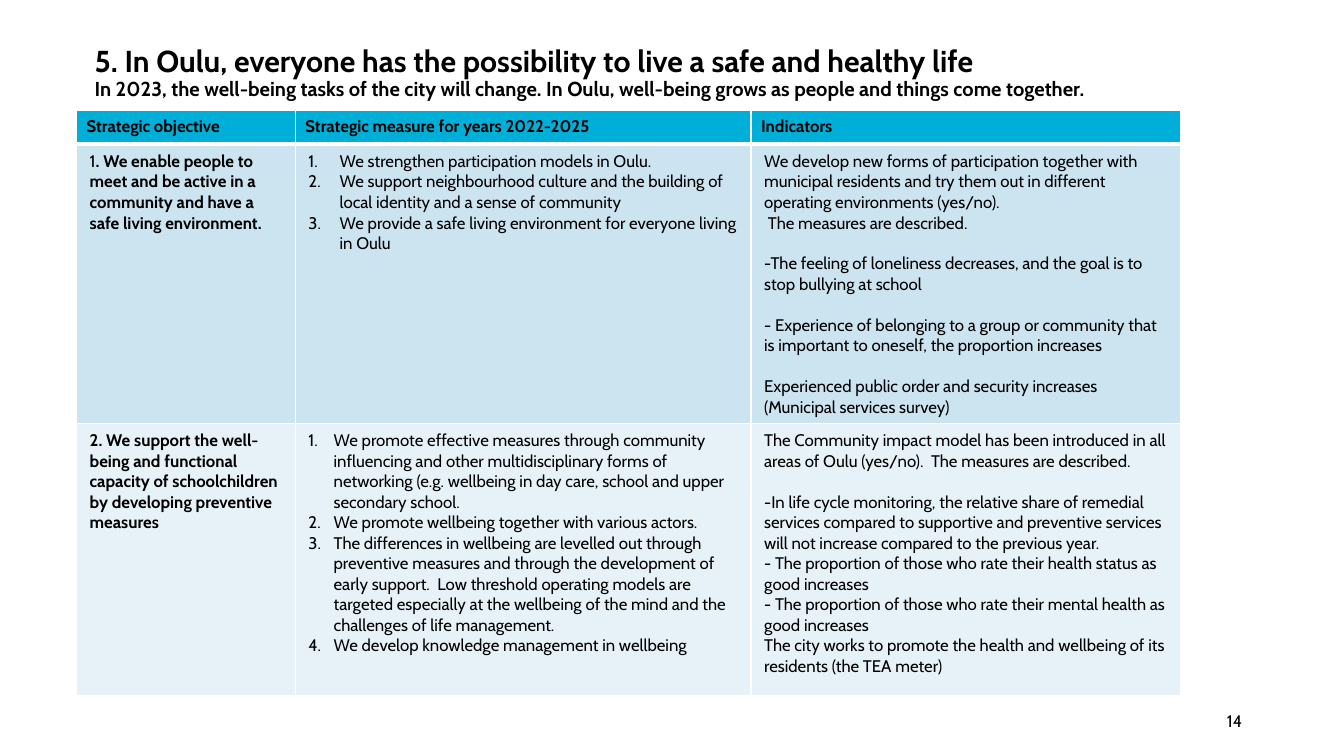
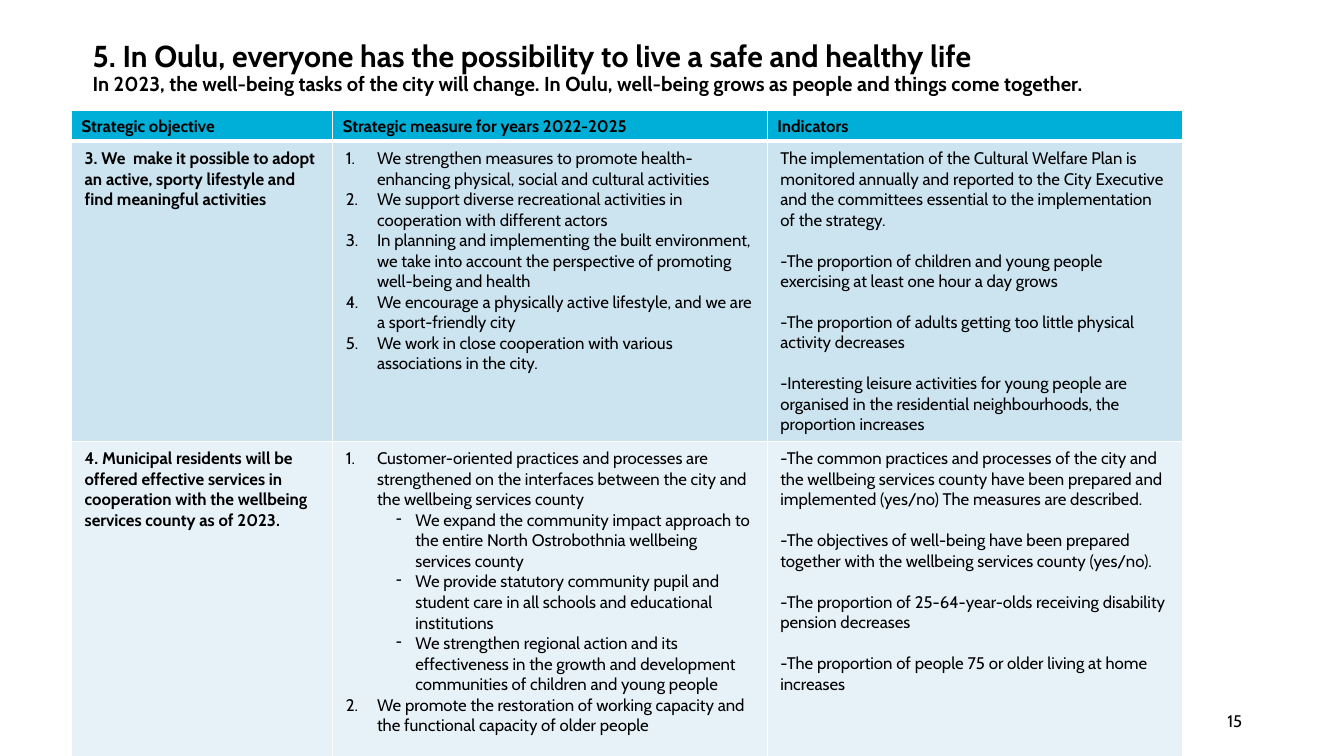
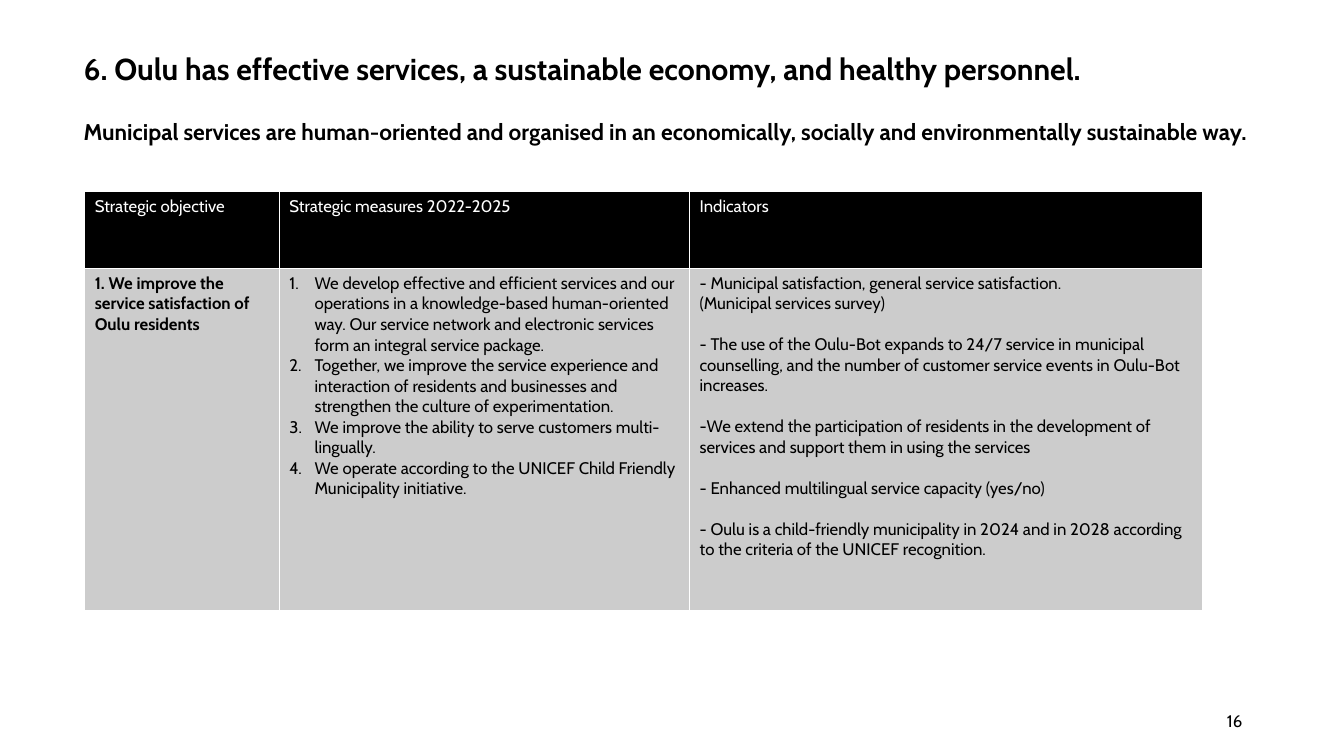
from dataclasses import dataclass

from lxml.etree import SubElement
from pptx import Presentation
from pptx.dml.color import RGBColor as Color
from pptx.enum.text import MSO_ANCHOR as Anchor, PP_ALIGN as Align
from pptx.oxml.ns import qn
from pptx.util import Inches, Pt


@dataclass(frozen=True)
class Theme:
    font: str = "Cabin"
    black: str = "000000"
    white: str = "FFFFFF"
    cyan: str = "00AFD7"
    band_dark: str = "CCE3F0"
    band_light: str = "E7F2F8"
    grey: str = "CCCCCC"
    title: float = 21.6
    body: float = 12
    blank_line: float = 14.6


theme = Theme()


def write(frame, text, size=theme.body, color=theme.black, bold=False,
          align=Align.LEFT, before=0, spacing=1.0, marker=None, left=0, hang=0, level=0):
    para = frame.paragraphs[0]
    if para.runs:
        para = frame.add_paragraph()
    para.alignment = align
    para.line_spacing = spacing
    para.space_before = Pt(before)
    para.level = level
    if marker:
        props = para._p.get_or_add_pPr()
        props.set("marL", str(Inches(left)))
        props.set("indent", str(-Inches(hang)))
        if marker == "number":
            SubElement(props, qn("a:buAutoNum"), type="arabicPeriod")
        else:
            SubElement(props, qn("a:buChar"), char=marker)
    spans = [(text, bold)] if isinstance(text, str) else text
    for words, weight in spans:
        span = para.add_run()
        span.text = words
        span.font.name = theme.font
        span.font.size = Pt(size)
        span.font.bold = weight
        span.font.color.rgb = Color.from_string(color)


def style_cell(cell, fill, top=1, bottom=1):
    props = cell._tc.get_or_add_tcPr()
    for side, width in (("L", 1), ("R", 1), ("T", top), ("B", bottom)):
        line = SubElement(props, qn(f"a:ln{side}"), w=str(Pt(width)))
        SubElement(SubElement(line, qn("a:solidFill")), qn("a:srgbClr"), val=theme.white)
    cell.fill.solid()
    cell.fill.fore_color.rgb = Color.from_string(fill)


safe_life = dict(
    title="5. In Oulu, everyone has the possibility to live a safe and healthy life",
    subtitle="In 2023, the well-being tasks of the city will change. In Oulu, "
             "well-being grows as people and things come together.",
    subtitle_size=14.4, subtitle_gap=0,
    headers=["Strategic objective", "Strategic measure for years 2022-2025", "Indicators"],
    header_fill=theme.cyan, header_color=theme.black, header_bold=True, header_rule=3,
    fills=[theme.band_dark, theme.band_light], insets=(0.13, 0.07),
)

slides = [
    dict(
        safe_life,
        number=14,
        title_at=(0.84, 0.31, 11.93, 0.84),
        table_at=(0.76, 1.1),
        columns=[2.17, 4.52, 4.26],
        heights=[0.33, 2.77, 2.7],
        indents=[0.31, 0.25],
        rows=[
            (
                [("1", False), (". We enable people to meet and be active in a community "
                                "and have a safe living environment.", True)],
                [
                    "We strengthen participation models in Oulu.",
                    "We support neighbourhood culture and the building of local identity "
                    "and a sense of community",
                    "We provide a safe living environment for everyone living in Oulu",
                ],
                [
                    ["We develop new forms of participation together with municipal residents "
                     "and try them out in different operating environments (yes/no).",
                     " The measures are described."],
                    ["-The feeling of loneliness decreases, and the goal is to stop bullying "
                     "at school"],
                    ["- Experience of belonging to a group or community that is important to "
                     "oneself, the proportion increases"],
                    ["Experienced public order and security increases "
                     "(Municipal services survey)"],
                ],
            ),
            (
                "2. We support the well-being and functional capacity of schoolchildren by "
                "developing preventive measures",
                [
                    "We promote effective measures through community influencing and other "
                    "multidisciplinary forms of networking (e.g. wellbeing in day care, school "
                    "and upper secondary school.",
                    "We promote wellbeing together with various actors.",
                    "The differences in wellbeing are levelled out through preventive measures "
                    "and through the development of early support.  Low threshold operating "
                    "models are targeted especially at the wellbeing of the mind and the "
                    "challenges of life management.",
                    "We develop knowledge management in wellbeing",
                ],
                [
                    ["The Community impact model has been introduced in all areas of Oulu "
                     "(yes/no).  The measures are described."],
                    ["-In life cycle monitoring, the relative share of remedial services "
                     "compared to supportive and preventive services will not increase "
                     "compared to the previous year.",
                     "- The proportion of those who rate their health status as good increases",
                     "- The proportion of those who rate their mental health as good increases",
                     "The city works to promote the health and wellbeing of its residents "
                     "(the TEA meter)"],
                ],
            ),
        ],
    ),
    dict(
        safe_life,
        number=15,
        title_at=(0.82, 0.26, 11.93, 0.84),
        table_at=(0.71, 1.1),
        columns=[2.59, 4.31, 4.12],
        heights=[0.29, 2.98, 3.13],
        indents=[0.31, 0.31],
        rows=[
            (
                "3. We  make it possible to adopt an active, sporty lifestyle and find "
                "meaningful activities",
                [
                    "We strengthen measures to promote health-enhancing physical, social and "
                    "cultural activities",
                    "We support diverse recreational activities in cooperation with different "
                    "actors",
                    "In planning and implementing the built environment, we take into account "
                    "the perspective of promoting well-being and health",
                    "We encourage a physically active lifestyle, and we are a sport-friendly city",
                    "We work in close cooperation with various associations in the city.",
                ],
                [
                    ["The implementation of the Cultural Welfare Plan is monitored annually and "
                     "reported to the City Executive and the committees essential to the "
                     "implementation of the strategy."],
                    ["-The proportion of children and young people exercising at least one hour "
                     "a day grows"],
                    ["-The proportion of adults getting too little physical activity decreases"],
                    ["-Interesting leisure activities for young people are organised in the "
                     "residential neighbourhoods, the proportion increases"],
                ],
            ),
            (
                "4. Municipal residents will be offered effective services in cooperation with "
                "the wellbeing services county as of 2023.",
                [
                    "Customer-oriented practices and processes are strengthened on the "
                    "interfaces between the city and the wellbeing services county",
                    [
                        "We expand the community impact approach to the entire North "
                        "Ostrobothnia wellbeing services county",
                        "We provide statutory community pupil and student care in all schools "
                        "and educational institutions",
                        "We strengthen regional action and its effectiveness in the growth and "
                        "development communities of children and young people",
                    ],
                    "We promote the restoration of working capacity and the functional capacity "
                    "of older people",
                ],
                [
                    ["-The common practices and processes of the city and the wellbeing services "
                     "county have been prepared and implemented (yes/no) The measures are "
                     "described."],
                    ["-The objectives of well-being have been prepared together with the "
                     "wellbeing services county (yes/no)."],
                    ["-The proportion of 25-64-year-olds receiving disability pension decreases"],
                    ["-The proportion of people 75 or older living at home increases"],
                ],
            ),
        ],
    ),
    dict(
        number=16,
        title="6. Oulu has effective services, a sustainable economy, and healthy personnel.",
        subtitle="Municipal services are human-oriented and organised in an economically, "
                 "socially and environmentally sustainable way.",
        subtitle_size=16.2, subtitle_gap=23.6,
        title_at=(0.73, 0.49, 12.05, 1),
        headers=["Strategic objective", "Strategic measures 2022-2025", "Indicators"],
        header_fill=theme.black, header_color=theme.white, header_bold=False, header_rule=1,
        fills=[theme.grey], insets=(0.1, 0.05),
        table_at=(0.84, 1.9),
        columns=[1.93, 4.07, 5.09],
        heights=[0.76, 3.4],
        indents=[0.25],
        rows=[
            (
                "1. We improve the service satisfaction of Oulu residents",
                [
                    "We develop effective and efficient services and our operations in a "
                    "knowledge-based human-oriented way. Our service network and electronic "
                    "services form an integral service package.",
                    "Together, we improve the service experience and interaction of residents "
                    "and businesses and strengthen the culture of experimentation.",
                    "We improve the ability to serve customers multi-lingually.",
                    "We operate according to the UNICEF Child Friendly Municipality initiative.",
                ],
                [
                    ["- Municipal satisfaction, general service satisfaction.",
                     "(Municipal services survey)"],
                    ["- The use of the Oulu-Bot expands to 24/7 service in municipal "
                     "counselling, and the number of customer service events in Oulu-Bot "
                     "increases."],
                    ["-We extend the participation of residents in the development of services "
                     "and support them in using the services"],
                    ["- Enhanced multilingual service capacity (yes/no)"],
                    ["- Oulu is a child-friendly municipality in 2024 and in 2028 according to "
                     "the criteria of the UNICEF recognition."],
                ],
            ),
        ],
    ),
]

deck = Presentation()
deck.slide_width = Inches(13.33)
deck.slide_height = Inches(7.5)

for content in slides:
    page = deck.slides.add_slide(deck.slide_layouts[6])

    title_box = page.shapes.add_textbox(*map(Inches, content["title_at"])).text_frame
    title_box.word_wrap = True
    title_box.vertical_anchor = Anchor.MIDDLE
    write(title_box, content["title"], size=theme.title, bold=True, spacing=0.9)
    write(title_box, content["subtitle"], size=content["subtitle_size"], bold=True,
          spacing=0.9, before=content["subtitle_gap"])

    columns, heights = content["columns"], content["heights"]
    left, top = content["table_at"]
    table = page.shapes.add_table(
        len(heights), len(columns), Inches(left), Inches(top),
        Inches(sum(columns)), Inches(sum(heights))).table
    table.horz_banding = False
    table.first_row = False
    for column, width in zip(table.columns, columns):
        column.width = Inches(width)
    for row, height in zip(table.rows, heights):
        row.height = Inches(height)

    rule = content["header_rule"]
    for cell, label in zip(table.rows[0].cells, content["headers"]):
        style_cell(cell, content["header_fill"], bottom=rule)
        write(cell.text_frame, label, color=content["header_color"],
              bold=content["header_bold"])

    side, edge = map(Inches, content["insets"])
    for index, (objective, measures, indicators) in enumerate(content["rows"]):
        cells = list(table.rows[index + 1].cells)
        for cell in cells:
            style_cell(cell, content["fills"][index], top=1 if index else rule)
            cell.margin_left = cell.margin_right = side
            cell.margin_top = cell.margin_bottom = edge
        objective_frame, measure_frame, indicator_frame = [cell.text_frame for cell in cells]

        write(objective_frame, objective, bold=True)

        indent = content["indents"][index]
        for measure in measures:
            if isinstance(measure, str):
                write(measure_frame, measure, marker="number", left=indent, hang=indent)
            else:
                for detail in measure:
                    write(measure_frame, detail, marker="-", left=0.69, hang=0.19, level=1)

        for order, group in enumerate(indicators):
            for position, indicator in enumerate(group):
                starts_group = order > 0 and position == 0
                write(indicator_frame, indicator,
                      before=theme.blank_line if starts_group else 0)

    number_box = page.shapes.add_textbox(
        Inches(9.42), Inches(6.95), Inches(3), Inches(0.4)).text_frame
    number_box.word_wrap = True
    number_box.vertical_anchor = Anchor.MIDDLE
    write(number_box, str(content["number"]), align=Align.RIGHT)

deck.save("out.pptx")
